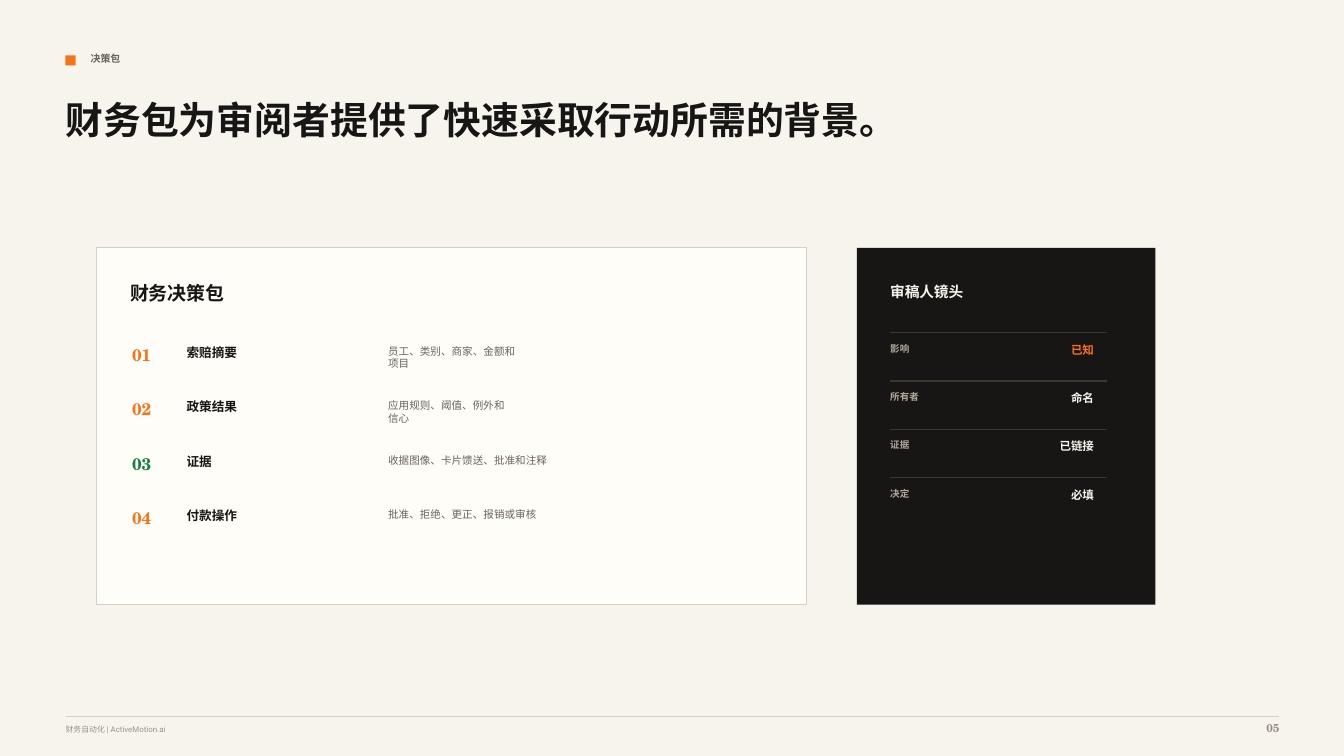
from dataclasses import dataclass

from lxml import etree
from pptx import Presentation
from pptx.dml.color import RGBColor
from pptx.enum.shapes import MSO_CONNECTOR, MSO_SHAPE
from pptx.enum.text import MSO_ANCHOR, MSO_AUTO_SIZE, PP_ALIGN
from pptx.oxml.ns import qn
from pptx.util import Inches, Pt


@dataclass(frozen=True)
class Theme:
    # Colours
    paper: str = "F7F4EE"
    card: str = "FFFDF8"
    ink: str = "171614"
    muted: str = "69635A"
    faint: str = "9A9184"
    label: str = "AFA79B"
    border: str = "D9D0C3"
    dark_rule: str = "3C362E"
    orange: str = "F97316"
    green: str = "15803D"
    # Fonts
    sans: str = "Roboto"
    serif: str = "TeX Gyre Schola"
    # Type sizes
    title: float = 27
    card_heading: float = 13.5
    number: float = 12
    lens_heading: float = 10.5
    item: float = 9
    value: float = 8.2
    detail: float = 7.5
    kicker: float = 7.1
    lens_label: float = 6.8
    footer: float = 5.6


THEME = Theme()

DECISION_ITEMS = [
    ("索赔摘要", ["员工、类别、商家、金额和", "项目"], THEME.orange),
    ("政策结果", ["应用规则、阈值、例外和", "信心"], THEME.orange),
    ("证据", ["收据图像、卡片馈送、批准和注释"], THEME.green),
    ("付款操作", ["批准、拒绝、更正、报销或审核"], THEME.orange),
]
LENS_ITEMS = [
    ("影响", "已知", THEME.orange),
    ("所有者", "命名", THEME.paper),
    ("证据", "已链接", THEME.paper),
    ("决定", "必填", THEME.paper),
]


def rgb(color):
    return RGBColor.from_string(color)


def write_text(shape, lines, size, color, font=THEME.sans, bold=True,
               align=PP_ALIGN.LEFT):
    """Fill a text shape with one paragraph per line."""
    frame = shape.text_frame
    frame_format = {
        "margin_left": 0, "margin_top": 0, "margin_right": 0,
        "margin_bottom": 0, "word_wrap": True,
        "auto_size": MSO_AUTO_SIZE.NONE, "vertical_anchor": MSO_ANCHOR.TOP,
    }
    for name, value in frame_format.items():
        setattr(frame, name, value)
    frame.text = "\n".join(lines)
    font_format = {"name": font, "size": Pt(size), "bold": bold}
    for paragraph in frame.paragraphs:
        paragraph.alignment = align
        for run in paragraph.runs:
            for name, value in font_format.items():
                setattr(run.font, name, value)
            run.font.color.rgb = rgb(color)


def add_text(slide, box, lines, size, color, **options):
    shape = slide.shapes.add_textbox(*map(Inches, box))
    write_text(shape, lines, size, color, **options)


def add_panel(slide, box, fill, border=None):
    shape = slide.shapes.add_shape(MSO_SHAPE.RECTANGLE, *map(Inches, box))
    shape.shadow.inherit = False
    shape.fill.solid()
    shape.fill.fore_color.rgb = rgb(fill)
    if border:
        shape.line.color.rgb = rgb(border)
        shape.line.width = Pt(0.75)
    else:
        shape.line.fill.background()


def add_rule(slide, left, top, width, color):
    rule = slide.shapes.add_connector(
        MSO_CONNECTOR.STRAIGHT, Inches(left), Inches(top),
        Inches(left + width), Inches(top))
    rule.line.color.rgb = rgb(color)
    rule.line.width = Pt(0.75)
    etree.SubElement(rule._element.spPr, qn("a:effectLst"))


def add_header(slide):
    add_panel(slide, (0.65, 0.55, 0.1, 0.1), THEME.orange)
    add_text(slide, (0.9, 0.52, 5.83, 0.19), ["决策包"],
             THEME.kicker, THEME.muted)
    title = slide.shapes.title
    placement = {"left": 0.65, "top": 0.96, "width": 9.38, "height": 1.02}
    for name, value in placement.items():
        setattr(title, name, Inches(value))
    write_text(title, ["财务包为审阅者提供了快速采取行动所需的背景。"],
               THEME.title, THEME.ink, font=THEME.serif)


def add_decision_card(slide):
    add_panel(slide, (0.96, 2.46, 7.04, 3.54), THEME.card, THEME.border)
    add_text(slide, (1.29, 2.79, 3.12, 0.25), ["财务决策包"],
             THEME.card_heading, THEME.ink)
    for index, (name, detail, accent) in enumerate(DECISION_ITEMS):
        top = 3.42 + 0.54 * index
        add_text(slide, (1.31, top, 0.35, 0.25), [f"{index + 1:02d}"],
                 THEME.number, accent, font=THEME.serif)
        add_text(slide, (1.85, top, 1.81, 0.19), [name],
                 THEME.item, THEME.ink)
        add_text(slide, (3.85, top, 3.33, 0.31), detail,
                 THEME.detail, THEME.muted, bold=False)


def add_reviewer_lens(slide):
    add_panel(slide, (8.5, 2.46, 2.96, 3.54), THEME.ink)
    add_text(slide, (8.83, 2.81, 1.67, 0.21), ["审稿人镜头"],
             THEME.lens_heading, THEME.paper)
    for index, (label, value, color) in enumerate(LENS_ITEMS):
        top = 3.3 + 0.48 * index
        add_rule(slide, 8.83, top, 2.15, THEME.dark_rule)
        add_text(slide, (8.83, top + 0.1, 0.96, 0.17), [label],
                 THEME.lens_label, THEME.label)
        add_text(slide, (10, top + 0.1, 0.85, 0.17), [value],
                 THEME.value, color, align=PP_ALIGN.RIGHT)


def add_footer(slide):
    add_rule(slide, 0.65, 7.11, 12.04, THEME.border)
    add_text(slide, (0.65, 7.19, 7.92, 0.15), ["财务自动化 | ActiveMotion.ai"],
             THEME.footer, THEME.faint, bold=False)
    add_text(slide, (12.19, 7.15, 0.5, 0.19), ["05"], THEME.value,
             THEME.faint, font=THEME.serif, align=PP_ALIGN.RIGHT)


def main():
    presentation = Presentation()
    presentation.slide_width = Inches(13.33)
    presentation.slide_height = Inches(7.5)

    # Title-only slide on a paper background
    slide = presentation.slides.add_slide(presentation.slide_layouts[5])
    slide.background.fill.solid()
    slide.background.fill.fore_color.rgb = rgb(THEME.paper)

    # Slide parts, top to bottom
    add_header(slide)
    add_decision_card(slide)
    add_reviewer_lens(slide)
    add_footer(slide)
    presentation.save("out.pptx")


if __name__ == "__main__":
    main()
